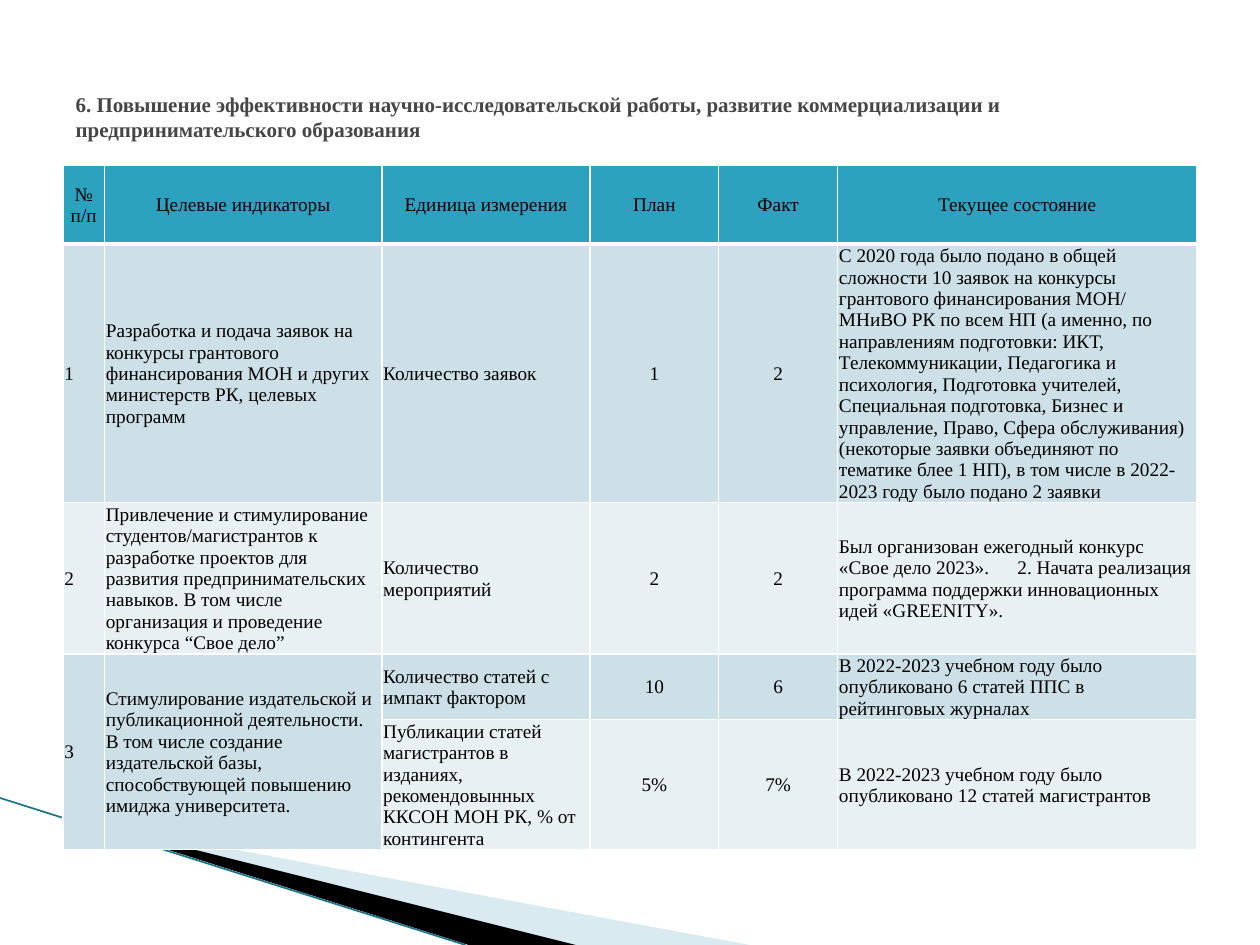
from dataclasses import dataclass

import pptx
import pptx.dml.color
import pptx.enum.shapes
import pptx.enum.text
import pptx.oxml
import pptx.oxml.ns
import pptx.util
from pptx.util import Pt

FONT = "Times New Roman"
WHITE, BLACK, TEAL = "FFFFFF", "000000", "2DA2BF"
DARK_BAND, LIGHT_BAND = "CDE0E8", "E8F0F4"
ALIGN = pptx.enum.text.PP_ALIGN
COLUMN_ALIGNMENTS = [ALIGN.JUSTIFY, ALIGN.LEFT, ALIGN.LEFT, ALIGN.CENTER, ALIGN.CENTER, ALIGN.LEFT]
COLUMN_WIDTHS = [23.75, 158.5, 119, 73.5, 68, 205.25]
TAB_STOP = 102


@dataclass
class Row:
    height: float
    fill: str
    texts: list[str]


@dataclass
class Wedge:
    points: list[tuple[float, float]]
    fill: str
    opacity: int


WEDGES = [
    Wedge([(39.6, 468), (428.4, 540), (328.3, 540)], "A0CBDC", 40),
    Wedge([(38.2, 467.3), (329, 540), (267.8, 540)], BLACK, 100),
]

ROWS = [
    Row(45, TEAL, ["№ п/п", "Целевые индикаторы", "Единица измерения", "План", "Факт", "Текущее состояние"]),
    Row(147.5, DARK_BAND, [
        "1",
        "Разработка и подача заявок на конкурсы грантового финансирования МОН и других "
        "министерств РК, целевых программ",
        "Количество заявок",
        "1",
        "2",
        "С 2020 года было подано в общей сложности 10 заявок на конкурсы грантового "
        "финансирования МОН/ МНиВО РК по всем НП (а именно, по направлениям подготовки: ИКТ, "
        "Телекоммуникации, Педагогика и психология, Подготовка учителей, Специальная подготовка, "
        "Бизнес и управление, Право, Сфера обслуживания) (некоторые заявки объединяют по тематике "
        "блее 1 НП), в том числе в 2022-2023 году было подано 2 заявки",
    ]),
    Row(86.5, LIGHT_BAND, [
        "2",
        "Привлечение и стимулирование студентов/магистрантов к разработке проектов для развития "
        "предпринимательских навыков. В том числе организация и проведение конкурса “Свое дело”",
        "Количество мероприятий",
        "2",
        "2",
        "Был организован ежегодный конкурс «Свое дело 2023».\t2. Начата реализация программа "
        "поддержки инновационных идей «GREENITY».",
    ]),
    Row(37.5, DARK_BAND, [
        "3",
        "Стимулирование издательской и публикационной деятельности. В том числе создание "
        "издательской базы, способствующей повышению имиджа университета.",
        "Количество статей с импакт фактором",
        "10",
        "6",
        "В 2022-2023 учебном году было опубликовано 6 статей ППС в рейтинговых журналах",
    ]),
    Row(74, LIGHT_BAND, [
        "",
        "",
        "Публикации статей магистрантов в изданиях, рекомендовынных ККСОН МОН РК, % от контингента",
        "5%",
        "7%",
        "В 2022-2023 учебном году было опубликовано 12 статей магистрантов",
    ]),
]


def paint(target, color: str) -> None:
    target.rgb = pptx.dml.color.RGBColor.from_string(color)


def fill_solid(fill, color: str) -> None:
    fill.solid()
    paint(fill.fore_color, color)


def add_element(parent, tag: str, **attributes):
    element = pptx.oxml.ns.qn(tag)
    child = parent.makeelement(element, {key: str(value) for key, value in attributes.items()})
    parent.append(child)
    return child


def add_span(para, text: str, size: float, color: str, bold: bool) -> None:
    span = para.add_run()
    span.text = text
    span.font.name = FONT
    span.font.size = Pt(size)
    span.font.bold = bold
    paint(span.font.color, color)


def draw_wedge(page, wedge: Wedge) -> None:
    corners = [(Pt(x), Pt(y)) for x, y in wedge.points]
    builder = page.shapes.build_freeform(*corners[0])
    builder.add_line_segments(corners[1:], close=True)
    shape = builder.convert_to_shape()
    shape.shadow.inherit = False
    shape.line.fill.background()
    fill_solid(shape.fill, wedge.fill)
    if wedge.opacity < 100:
        color = shape.element.spPr.find(".//" + pptx.oxml.ns.qn("a:srgbClr"))
        add_element(color, "a:alpha", val=wedge.opacity * 1000)


def draw_edge(page) -> None:
    edge = page.shapes.add_connector(
        pptx.enum.shapes.MSO_CONNECTOR.STRAIGHT, Pt(0), Pt(456), Pt(266), Pt(540))
    edge.line.width = Pt(0.95)
    paint(edge.line.color, "1C7286")
    add_element(edge.element.spPr, "a:effectLst")


def set_borders(cell, top: float, bottom: float) -> None:
    properties = cell._tc.get_or_add_tcPr()
    sides = [("a:lnL", 1), ("a:lnR", 1), ("a:lnT", top), ("a:lnB", bottom)]
    for index, (tag, width) in enumerate(sides):
        line = add_element(properties, tag, w=Pt(width))
        add_element(add_element(line, "a:solidFill"), "a:srgbClr", val=WHITE)
        properties.insert(index, line)


def fill_cell(cell, text: str, fill: str, alignment) -> None:
    cell.vertical_anchor = pptx.enum.text.MSO_ANCHOR.MIDDLE
    cell.margin_left = cell.margin_right = cell.margin_top = Pt(0.75)
    cell.margin_bottom = Pt(0)
    fill_solid(cell.fill, fill)
    if not text:
        return
    para = cell.text_frame.paragraphs[0]
    para.alignment = alignment
    if "\t" in text:
        tabs = add_element(para._p.get_or_add_pPr(), "a:tabLst")
        add_element(tabs, "a:tab", pos=Pt(TAB_STOP), algn="l")
    add_span(para, text, 11, BLACK, False)


def draw_table(page, rows: list[Row]) -> None:
    frame = page.shapes.add_table(
        len(rows), len(COLUMN_WIDTHS), Pt(36), Pt(94.5),
        Pt(sum(COLUMN_WIDTHS)), Pt(sum(row.height for row in rows)))
    table = frame.table
    table.horz_banding = False
    for column, width in zip(table.columns, COLUMN_WIDTHS):
        column.width = Pt(width)
    for row_index, row in enumerate(rows):
        table.rows[row_index].height = Pt(row.height)
        for column_index, text in enumerate(row.texts):
            cell = table.cell(row_index, column_index)
            alignment = ALIGN.CENTER if row_index == 0 else COLUMN_ALIGNMENTS[column_index]
            fill_cell(cell, text, row.fill, alignment)
            set_borders(cell, 3 if row_index == 1 else 1, 3 if row_index == 0 else 1)
    for column_index in range(2):
        table.cell(3, column_index).merge(table.cell(4, column_index))


def write_title(page) -> None:
    title = page.shapes.title
    title.left, title.top, title.width, title.height = Pt(36), Pt(21.6), Pt(648), Pt(90)
    title.text_frame.word_wrap = True
    title.text_frame.vertical_anchor = pptx.enum.text.MSO_ANCHOR.MIDDLE
    para = title.text_frame.paragraphs[0]
    para.alignment = ALIGN.LEFT
    add_span(
        para,
        "6. Повышение эффективности научно-исследовательской работы, развитие "
        "коммерциализации и предпринимательского образования",
        12, "464646", True)


def main() -> None:
    deck = pptx.Presentation()
    deck.slide_width, deck.slide_height = Pt(720), Pt(540)
    page = deck.slides.add_slide(deck.slide_layouts[5])
    write_title(page)
    for wedge in WEDGES:
        draw_wedge(page, wedge)
    draw_edge(page)
    draw_table(page, ROWS)
    deck.save("out.pptx")


if __name__ == "__main__":
    main()
